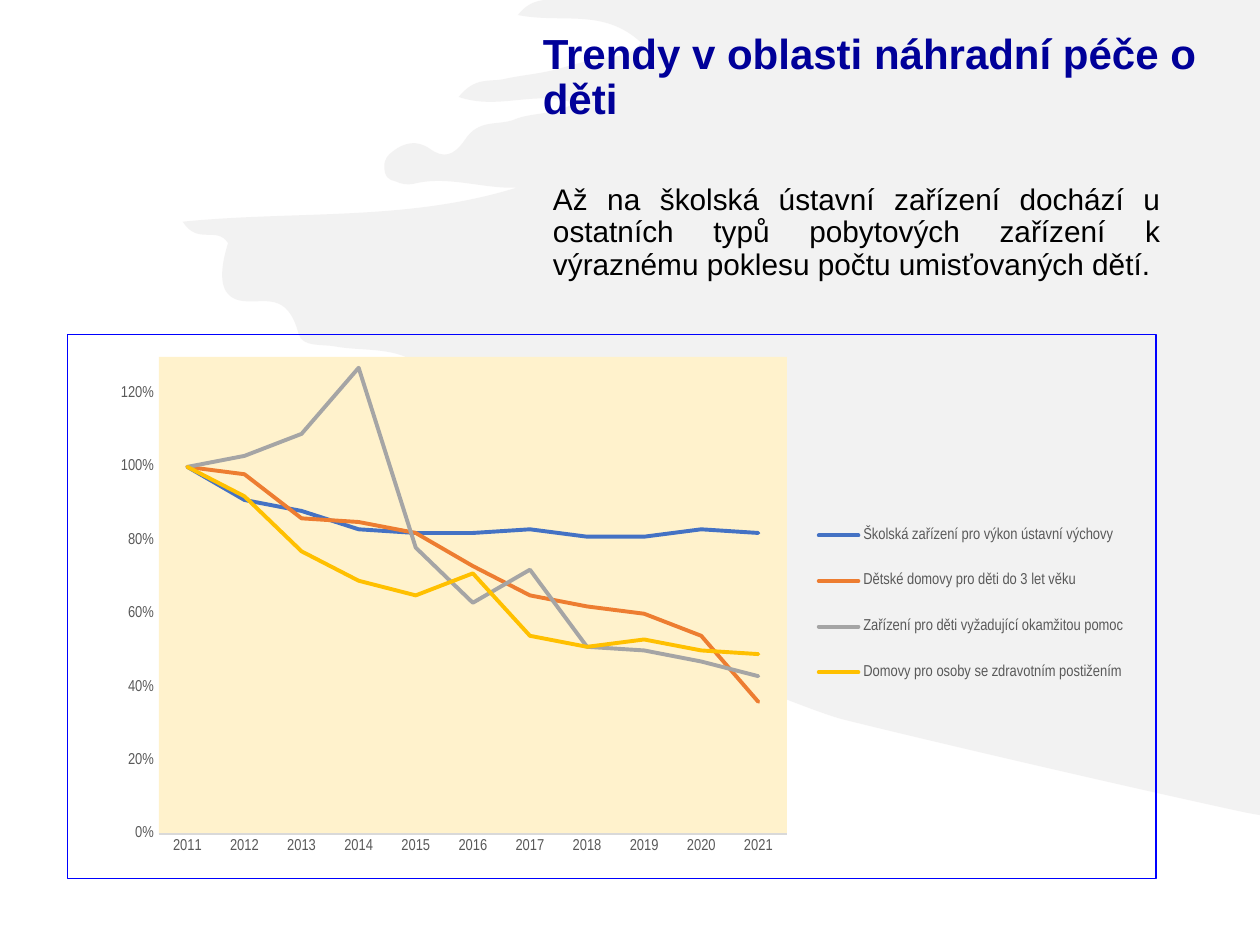
from pptx import Presentation
from pptx.chart.data import CategoryChartData
from pptx.dml.color import RGBColor
from pptx.enum.chart import XL_CHART_TYPE, XL_LEGEND_POSITION, XL_TICK_MARK
from pptx.enum.text import MSO_ANCHOR, PP_ALIGN
from pptx.oxml import parse_xml
from pptx.oxml.ns import nsdecls, qn
from pptx.util import Inches, Pt

CURVES = [
    (4.25, 0.01, 4.18, 0.03, 4.11, 0.12), (4.46, 0.19, 4.79, 0.06, 5.09, 0.34),
    (4.98, 0.47, 4.86, 0.44, 4.74, 0.47), (4.62, 0.49, 4.5, 0.53, 4.38, 0.56),
    (4.25, 0.59, 4.12, 0.6, 3.99, 0.63), (3.88, 0.65, 3.77, 0.61, 3.64, 0.77),
    (3.96, 0.88, 4.25, 0.71, 4.56, 0.82), (4.38, 0.92, 4.22, 0.89, 4.08, 0.95),
    (3.95, 1, 3.8, 0.94, 3.69, 1.11), (3.6, 1.24, 3.52, 1.26, 3.41, 1.18),
    (3.31, 1.11, 3.21, 1.13, 3.12, 1.2), (3.08, 1.23, 3.05, 1.26, 3.05, 1.32),
    (3.05, 1.41, 3.09, 1.43, 3.14, 1.44), (3.18, 1.46, 3.23, 1.47, 3.28, 1.46),
    (3.55, 1.39, 3.83, 1.5, 4.1, 1.49), (3.23, 1.76, 2.35, 1.67, 1.45, 1.76),
    (1.57, 1.95, 1.72, 1.79, 1.81, 1.93), (1.72, 2.22, 1.76, 2.37, 1.93, 2.39),
    (2.1, 2.41, 2.28, 2.31, 2.37, 2.65), (2.4, 2.76, 2.56, 2.73, 2.66, 2.75),
    (2.88, 2.79, 3.11, 2.75, 3.31, 2.88), (3.4, 2.93, 3.45, 2.97, 3.41, 3.11),
    (3.37, 3.25, 3.42, 3.3, 3.49, 3.36), (3.54, 3.4, 3.62, 3.39, 3.67, 3.52),
    (3.21, 3.5, 2.77, 3.4, 2.32, 3.5), (2.81, 3.74, 3.35, 3.73, 3.84, 4.02),
    (3.82, 4.12, 3.71, 4.07, 3.7, 4.22), (3.96, 4.38, 4.27, 4.27, 4.54, 4.5),
    (4.38, 4.61, 4.24, 4.44, 4.09, 4.54), (4.14, 4.69, 6.3, 5.61, 6.69, 5.71),
    (7.33, 5.87, 8.96, 6.25, 9.89, 6.45),
]
YEARS = [str(year) for year in range(2011, 2022)]
SERIES = [
    ("Školská zařízení pro výkon ústavní výchovy", "4472C4",
     [1, 0.91, 0.88, 0.83, 0.82, 0.82, 0.83, 0.81, 0.81, 0.83, 0.82]),
    ("Dětské domovy pro děti do 3 let věku", "ED7D31",
     [1, 0.98, 0.86, 0.85, 0.82, 0.73, 0.65, 0.62, 0.6, 0.54, 0.36]),
    ("Zařízení pro děti vyžadující okamžitou pomoc", "A5A5A5",
     [1, 1.03, 1.09, 1.27, 0.78, 0.63, 0.72, 0.51, 0.5, 0.47, 0.43]),
    ("Domovy pro osoby se zdravotním postižením", "FFC000",
     [1, 0.92, 0.77, 0.69, 0.65, 0.71, 0.54, 0.51, 0.53, 0.5, 0.49]),
]


def rgb(value):
    """Turn a hex string into a colour."""
    return RGBColor.from_string(value)


def set_font(font, name, size, color, bold=False):
    """Set the face, size, colour and weight of a font."""
    font.name, font.size, font.bold = name, Pt(size), bold
    font.color.rgb = rgb(color)


def curve_segments(segments):
    """Merge each three line segments into one cubic curve."""
    for i in range(0, len(segments), 3):
        first, *rest = segments[i:i + 3]
        curve = parse_xml(f'<a:cubicBezTo {nsdecls("a")}/>')
        first.addprevious(curve)
        for segment in (first, *rest):
            curve.append(segment[0])
            segment.getparent().remove(segment)


def add_backdrop(s, right, bottom):
    """Draw the pale brush stroke that reaches the given right and bottom."""
    points = [(4.32, 0)]
    for curve in CURVES:
        points += zip(curve[::2], curve[1::2])
    points.append((right, bottom))
    builder = s.shapes.build_freeform(Inches(right), 0, scale=1.0)
    builder.add_line_segments([(Inches(x), Inches(y)) for x, y in points], close=True)
    sp = builder.convert_to_shape()
    curve_segments(list(sp._element.iter(qn("a:lnTo")))[1:-1])
    sp.shadow.inherit = False
    sp.line.fill.background()
    sp.fill.solid()
    sp.fill.fore_color.rgb = rgb("E7E6E6")
    color = sp._element.spPr.find(".//" + qn("a:srgbClr"))
    color.append(parse_xml(f'<a:alpha {nsdecls("a")} val="50000"/>'))


def add_text(s, box, text, size, color, bold=False):
    """Add a wrapped paragraph in a box and return its frame and paragraph."""
    tf = s.shapes.add_textbox(*map(Inches, box)).text_frame
    tf.word_wrap = True
    tf.text = text
    p = tf.paragraphs[0]
    p.line_spacing = 0.9
    set_font(p.runs[0].font, "Arial", size, color, bold)
    return tf, p


def add_title(s, box):
    """Add the slide title, resting on the bottom of its box."""
    tf, p = add_text(s, box, "Trendy v oblasti náhradní péče o děti", 24, "000099", True)
    tf.vertical_anchor = MSO_ANCHOR.BOTTOM


def add_body(s, box):
    """Add the justified summary."""
    text = ("Až na školská ústavní zařízení dochází u ostatních typů pobytových zařízení "
            "k výraznému poklesu počtu umisťovaných dětí.")
    tf, p = add_text(s, box, text, 17, "000000")
    p.alignment = PP_ALIGN.JUSTIFY
    p.space_before, p.space_after = Pt(7.5), Pt(2)


def layout_xml(x, y, w, h, inner=False):
    """Return a manual chart layout in fractions of the chart."""
    target = '<c:layoutTarget val="inner"/>' if inner else ""
    return parse_xml(
        f'<c:layout {nsdecls("c")}><c:manualLayout>{target}'
        f'<c:xMode val="edge"/><c:yMode val="edge"/><c:x val="{x}"/><c:y val="{y}"/>'
        f'<c:w val="{w}"/><c:h val="{h}"/></c:manualLayout></c:layout>')


def sp_pr(content):
    """Return chart shape properties around the given content."""
    return parse_xml(f'<c:spPr {nsdecls("c", "a")}>{content}</c:spPr>')


def place_parts(chart):
    """Position the plot and legend, and set the plot fill and the frame."""
    root = chart._chartSpace
    plot = root.find(".//" + qn("c:plotArea"))
    legend = root.find(".//" + qn("c:legend"))
    for part in (plot, legend):
        for old in part.findall(qn("c:layout")):
            part.remove(old)
    plot.insert(0, layout_xml(0.084, 0.041, 0.577, 0.877, inner=True))
    legend.find(qn("c:legendPos")).addnext(layout_xml(0.68, 0.3, 0.3, 0.39))
    plot.append(sp_pr('<a:solidFill><a:srgbClr val="FFF2CC"/></a:solidFill>'))
    root.find(qn("c:chart")).addnext(sp_pr(
        '<a:noFill/><a:ln w="9525"><a:solidFill><a:srgbClr val="0000FF"/></a:solidFill></a:ln>'))


def style_series(series, color):
    """Give a series a straight, round-ended line."""
    series.smooth = False
    line = series.format.line
    line.width = Pt(2.25)
    line.color.rgb = rgb(color)
    ln = series._element.find(".//" + qn("a:ln"))
    ln.set("cap", "rnd")
    ln.append(parse_xml(f'<a:round {nsdecls("a")}/>'))


def add_trend_chart(s, box):
    """Add the line chart of placements relative to 2011."""
    data = CategoryChartData(number_format="0%")
    data.categories = YEARS
    for name, _, values in SERIES:
        data.add_series(name, values)
    chart = s.shapes.add_chart(XL_CHART_TYPE.LINE, *map(Inches, box), data).chart
    set_font(chart.font, "Arial Narrow", 9, "000000")
    chart.has_title = False
    chart.has_legend = True
    chart.legend.position = XL_LEGEND_POSITION.RIGHT
    chart.legend.include_in_layout = False
    chart.plots[0].vary_by_categories = False
    for series, (_, color, _) in zip(chart.plots[0].series, SERIES):
        style_series(series, color)
    cat, val = chart.category_axis, chart.value_axis
    for axis in (cat, val):
        axis.major_tick_mark = axis.minor_tick_mark = XL_TICK_MARK.NONE
        axis.has_major_gridlines = False
    for part in (cat.tick_labels, val.tick_labels, chart.legend):
        set_font(part.font, "Arial Narrow", 9, "595959")
    cat.format.line.color.rgb = rgb("D9D9D9")
    cat.format.line.width = Pt(0.75)
    val.format.line.fill.background()
    val.minimum_scale, val.maximum_scale, val.major_unit = 0, 1.3, 0.2
    val.tick_labels.number_format = "0%"
    val.tick_labels.number_format_is_linked = False
    place_parts(chart)


def main():
    """Build and save the slide."""
    prs = Presentation()
    prs.slide_width, prs.slide_height = Inches(10), Inches(7.5)
    s = prs.slides.add_slide(prs.slide_layouts[6])
    add_backdrop(s, 10, 6.47)
    add_title(s, (4.21, 0.4, 5.43, 0.63))
    add_body(s, (4.29, 1.42, 5.02, 1.07))
    add_trend_chart(s, (0.53, 2.65, 8.65, 4.33))
    prs.save("out.pptx")


if __name__ == "__main__":
    main()
